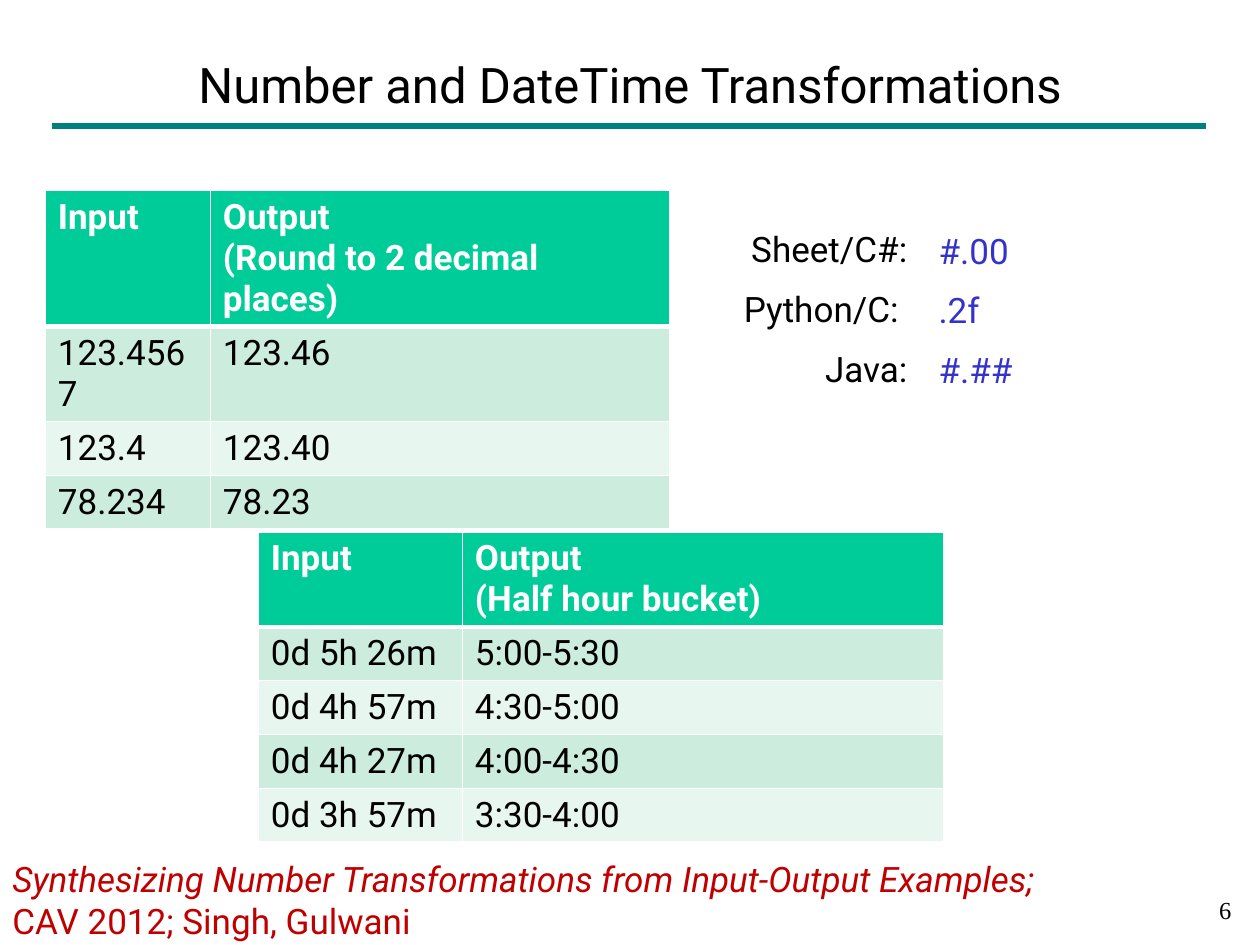
from lxml.etree import SubElement
from pptx import Presentation
from pptx.dml.color import RGBColor as Color
from pptx.enum.shapes import MSO_CONNECTOR as Connector
from pptx.enum.text import MSO_ANCHOR as Anchor, PP_ALIGN as Align
from pptx.oxml.ns import qn
from pptx.util import Pt

COLORS = {
    "rule": "008080", "header": "00CC99", "odd": "CCECDE", "even": "E7F6EF",
    "white": "FFFFFF", "black": "000000", "citation": "C00000", "format": "3333CC",
}


def write(frame, lines, size=20, color="black", font="Roboto", align=Align.LEFT,
          bold=False, italics=(), spaced=False):
    frame.word_wrap = True
    for index, line in enumerate(lines):
        para = frame.paragraphs[0] if index == 0 else frame.add_paragraph()
        para.alignment = align
        if spaced:
            before = SubElement(para._p.get_or_add_pPr(), qn("a:spcBef"))
            SubElement(before, qn("a:spcPct"), val="50000")
        span = para.add_run()
        span.text = line
        span.font.name = font
        span.font.size = Pt(size)
        span.font.bold = bold
        span.font.italic = index in italics
        span.font.color.rgb = Color.from_string(COLORS[color])


def add_border(cell, side, width):
    line = SubElement(cell._tc.get_or_add_tcPr(), qn(f"a:ln{side}"), w=str(Pt(width)))
    fill = SubElement(line, qn("a:solidFill"))
    SubElement(fill, qn("a:srgbClr"), val=COLORS["white"])


deck = Presentation()
deck.slide_width, deck.slide_height = Pt(720), Pt(540)
page = deck.slides.add_slide(deck.slide_layouts[6])

rule = page.shapes.add_connector(Connector.STRAIGHT, Pt(30), Pt(72), Pt(689), Pt(72))
rule.line.color.rgb = Color.from_string(COLORS["rule"])
rule.line.width = Pt(4)
SubElement(rule._element.spPr, qn("a:effectLst"))

tables = [
    (147.6, 303.9, (116.6, 275), 54, [
        (["Input"], ["Output", "(Half hour bucket)"]),
        (["0d 5h 26m"], ["5:00-5:30"]),
        (["0d 4h 57m"], ["4:30-5:00"]),
        (["0d 4h 27m"], ["4:00-4:30"]),
        (["0d 3h 57m"], ["3:30-4:00"]),
    ]),
    (25.9, 108.8, (94.3, 262.8), 52.6, [
        (["Input"], ["Output", "(Round to 2 decimal places)"]),
        (["123.4567"], ["123.46"]),
        (["123.4"], ["123.40"]),
        (["78.234"], ["78.23"]),
    ]),
]
for left, top, widths, header_height, rows in tables:
    heights = [header_height] + [29.5] * (len(rows) - 1)
    table = page.shapes.add_table(len(rows), 2, Pt(left), Pt(top),
                                  Pt(sum(widths)), Pt(sum(heights))).table
    for column, width in zip(table.columns, widths):
        column.width = Pt(width)
    for r, row in enumerate(rows):
        table.rows[r].height = Pt(heights[r])
        header = r == 0
        shade = "header" if header else ("even", "odd")[r % 2]
        for c, lines in enumerate(row):
            cell = table.cell(r, c)
            write(cell.text_frame, lines, color="white" if header else "black", bold=header)
            for side in "LRTB":
                thick = (r, side) in ((0, "B"), (1, "T"))
                add_border(cell, side, 3 if thick else 1)
            cell.fill.solid()
            cell.fill.fore_color.rgb = Color.from_string(COLORS[shade])

texts = [
    (560.9, 507.6, 149.8, 30.2, ["6"],
     dict(size=14, font="Times New Roman", align=Align.RIGHT)),
    (54, 23.8, 612, 48.2, ["Number and DateTime Transformations"],
     dict(size=28, align=Align.CENTER)),
    (0, 486.7, 710.6, 55.4,
     ["Synthesizing Number Transformations from Input-Output Examples;",
      "CAV 2012; Singh, Gulwani"],
     dict(color="citation", italics=(0,))),
    (411.8, 126.7, 113.8, 104.4, ["Sheet/C#:", "Python/C: ", "Java:"],
     dict(align=Align.RIGHT, spaced=True)),
    (529.2, 127.4, 82.8, 104.4, ["#.00", ".2f", "#.##"],
     dict(color="format", spaced=True)),
]
for left, top, width, height, lines, style in texts:
    box = page.shapes.add_textbox(Pt(left), Pt(top), Pt(width), Pt(height))
    centered = style.get("align") == Align.CENTER
    box.text_frame.vertical_anchor = Anchor.MIDDLE if centered else Anchor.TOP
    write(box.text_frame, lines, **style)

deck.save("out.pptx")
